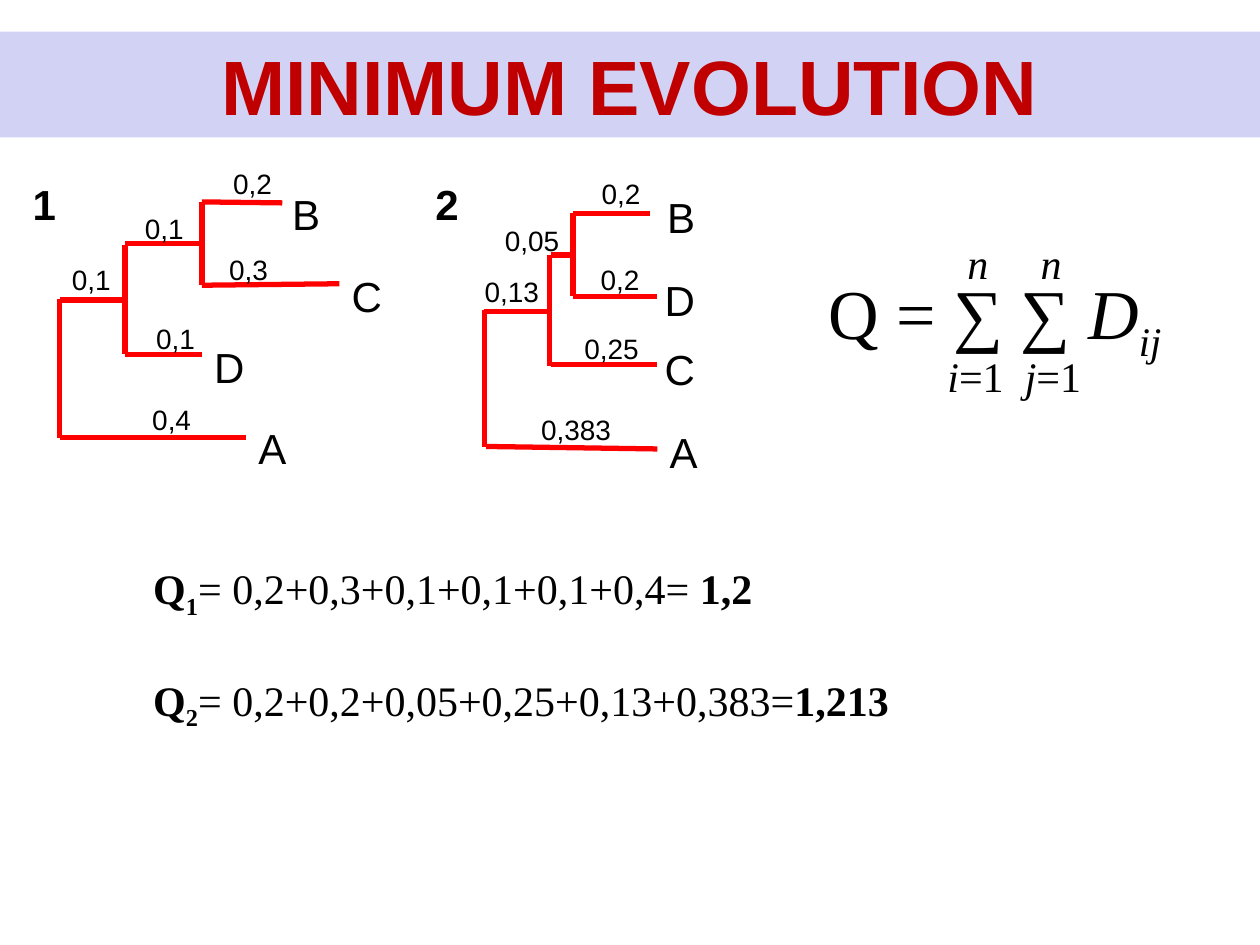
from lxml import etree
from pptx import Presentation
from pptx.dml.color import RGBColor
from pptx.enum.shapes import MSO_CONNECTOR, MSO_SHAPE
from pptx.enum.text import MSO_ANCHOR, MSO_AUTO_SIZE, PP_ALIGN
from pptx.oxml.ns import qn
from pptx.util import Cm, Pt

STRAIGHT = MSO_CONNECTOR.STRAIGHT
RECT = MSO_SHAPE.RECTANGLE
BOTTOM = MSO_ANCHOR.BOTTOM
GROW = MSO_AUTO_SIZE.SHAPE_TO_FIT_TEXT
CENTER = PP_ALIGN.CENTER
SANS, SERIF = "Arial", "Times New Roman"
BLACK, RED, DARK_RED, LAVENDER = "000000", "FF0000", "C00000", "D2D2F4"

TREE_1 = {
    "number": "1",
    "branches": [
        (3.66, 0.89, 5.28, 0.91), (3.66, 0.89, 3.66, 2.57),
        (3.66, 2.57, 6.43, 2.54), (2.11, 3.96, 3.66, 3.96),
        (2.11, 1.73, 3.66, 1.73), (2.11, 1.75, 2.11, 3.96),
        (0.79, 2.87, 2.11, 2.87), (0.79, 2.84, 0.79, 5.64),
        (0.79, 5.64, 4.55, 5.64),
    ],
    "taxa": [("C", 6.43, 2.06), ("B", 5.23, 0.41), ("D", 3.66, 3.48), ("A", 4.55, 5.13)],
    "lengths": [
        ("0,2", 4.04, 0), ("0,3", 3.96, 1.73), ("0,1", 2.49, 3.12),
        ("0,1", 2.26, 0.91), ("0,4", 2.41, 4.75), ("0,1", 0.79, 1.93),
    ],
}
TREE_2 = {
    "number": "2",
    "branches": [
        (3.02, 1.12, 4.57, 1.12), (3.02, 1.12, 3.02, 2.79),
        (3.02, 2.79, 4.72, 2.79), (2.57, 4.17, 4.72, 4.17),
        (2.57, 1.96, 3.02, 1.96), (2.54, 1.96, 2.54, 4.19),
        (1.22, 3.1, 2.54, 3.1), (1.24, 3.07, 1.24, 5.84),
        (1.27, 5.82, 4.72, 5.87),
    ],
    "taxa": [("D", 4.62, 2.13), ("B", 4.67, 0.46), ("C", 4.62, 3.53), ("A", 4.72, 5.21)],
    "lengths": [
        ("0,2", 3.35, 0.2), ("0,05", 1.4, 1.14), ("0,383", 2.13, 4.95),
        ("0,13", 0.99, 2.18), ("0,2", 3.33, 1.93), ("0,25", 3, 3.33),
    ],
}
SUMS = [
    ("1", "= 0,2+0,3+0,1+0,1+0,1+0,4= ", "1,2"),
    ("2", "= 0,2+0,2+0,05+0,25+0,13+0,383=", "1,213"),
]


def rgb(value):
    return RGBColor.from_string(value)


def add_run(p, text, size, font, color=BLACK, bold=False, italic=False, sub=False):
    r = p.add_run()
    r.text = text
    r.font.size = Pt(size)
    r.font.name = font
    r.font.bold = bold
    r.font.italic = italic
    r.font.color.rgb = rgb(color)
    if sub:
        r.font._element.set("baseline", "-25000")


def add_text_box(shapes, x, y, w, h, size):
    tf = shapes.add_textbox(Cm(x), Cm(y), Cm(w), Cm(h)).text_frame
    tf.word_wrap = False
    tf.auto_size = GROW
    tf.margin_top = Cm(0.12 + 0.004 * size)
    tf.margin_bottom = 0
    return tf


def add_label(shapes, text, x, y, w, h, size, bold=False):
    tf = add_text_box(shapes, x, y, w, h, size)
    add_run(tf.paragraphs[0], text, size, SANS, bold=bold)


def add_branch(shapes, x1, y1, x2, y2):
    line = shapes.add_connector(STRAIGHT, Cm(x1), Cm(y1), Cm(x2), Cm(y2))
    line.line.color.rgb = rgb(RED)
    line.line.width = Pt(3)
    etree.SubElement(line._element.spPr, qn("a:effectLst"))


def add_tab_stop(p, position):
    tabs = etree.SubElement(p._p.get_or_add_pPr(), qn("a:tabLst"))
    etree.SubElement(tabs, qn("a:tab"), pos=str(Cm(position)), algn="l")


def add_title(shapes, x, y, w, h):
    sp = shapes.add_shape(RECT, Cm(x), Cm(y), Cm(w), Cm(h))
    sp.shadow.inherit = False
    sp.fill.solid()
    sp.fill.fore_color.rgb = rgb(LAVENDER)
    sp.line.fill.background()
    tf = sp.text_frame
    tf.word_wrap = True
    tf.vertical_anchor = BOTTOM
    p = tf.paragraphs[0]
    p.alignment = CENTER
    add_run(p, "MINIMUM EVOLUTION", 44, SANS, DARK_RED, bold=True)


def add_tree(shapes, x, y, tree):
    for x1, y1, x2, y2 in tree["branches"]:
        add_branch(shapes, x + x1, y + y1, x + x2, y + y2)
    for name, dx, dy in tree["taxa"]:
        add_label(shapes, name, x + dx, y + dy, 1.12, 1.29, 24)
    for length, dx, dy in tree["lengths"]:
        width = 1.3 + 0.32 * (len(length) - 3)
        add_label(shapes, length, x + dx, y + dy, width, 0.94, 16)
    add_label(shapes, tree["number"], x, y + 0.2, 0.99, 1.29, 24, bold=True)


def add_formula(shapes, x, y):
    group = shapes.add_group_shape().shapes
    p = add_text_box(group, x, y + 0.58, 7.24, 1.96, 40).paragraphs[0]
    add_run(p, "Q = ∑ ∑ ", 40, SERIF)
    add_run(p, "D", 40, SERIF, italic=True)
    add_run(p, "ij", 40, SERIF, italic=True, sub=True)

    p = add_text_box(group, x + 2.79, y, 2.44, 1.27, 24).paragraphs[0]
    add_tab_stop(p, 1.48)
    add_run(p, "n\tn", 24, SERIF, italic=True)

    p = add_text_box(group, x + 2.39, y + 2.29, 3.23, 1.27, 24).paragraphs[0]
    add_tab_stop(p, 1.56)
    for text, italic in (("i", True), ("=1\t", False), ("j", True), ("=1", False)):
        add_run(p, text, 24, SERIF, italic=italic)


def add_sums(shapes, x, y, w, h):
    tf = add_text_box(shapes, x, y, w, h, 24)
    for i, (index, terms, total) in enumerate(SUMS):
        p = tf.add_paragraph() if i else tf.paragraphs[0]
        p.space_before = Pt(31 * i)
        add_run(p, "Q", 24, SERIF, bold=True)
        add_run(p, index, 24, SERIF, bold=True, sub=True)
        add_run(p, terms, 24, SERIF)
        add_run(p, total, 24, SERIF, bold=True)


def main():
    prs = Presentation()
    prs.slide_width, prs.slide_height = Cm(25.4), Cm(19.05)
    s = prs.slides.add_slide(prs.slide_layouts[6])
    add_formula(s.shapes, 16.46, 4.57)
    add_title(s.shapes, 0, 0.64, 25.4, 2.13)
    add_tree(s.shapes, 0.41, 3.18, TREE_1)
    add_tree(s.shapes, 8.53, 3.18, TREE_2)
    add_sums(s.shapes, 2.84, 11.13, 15.95, 4.37)
    prs.save("out.pptx")


if __name__ == "__main__":
    main()
